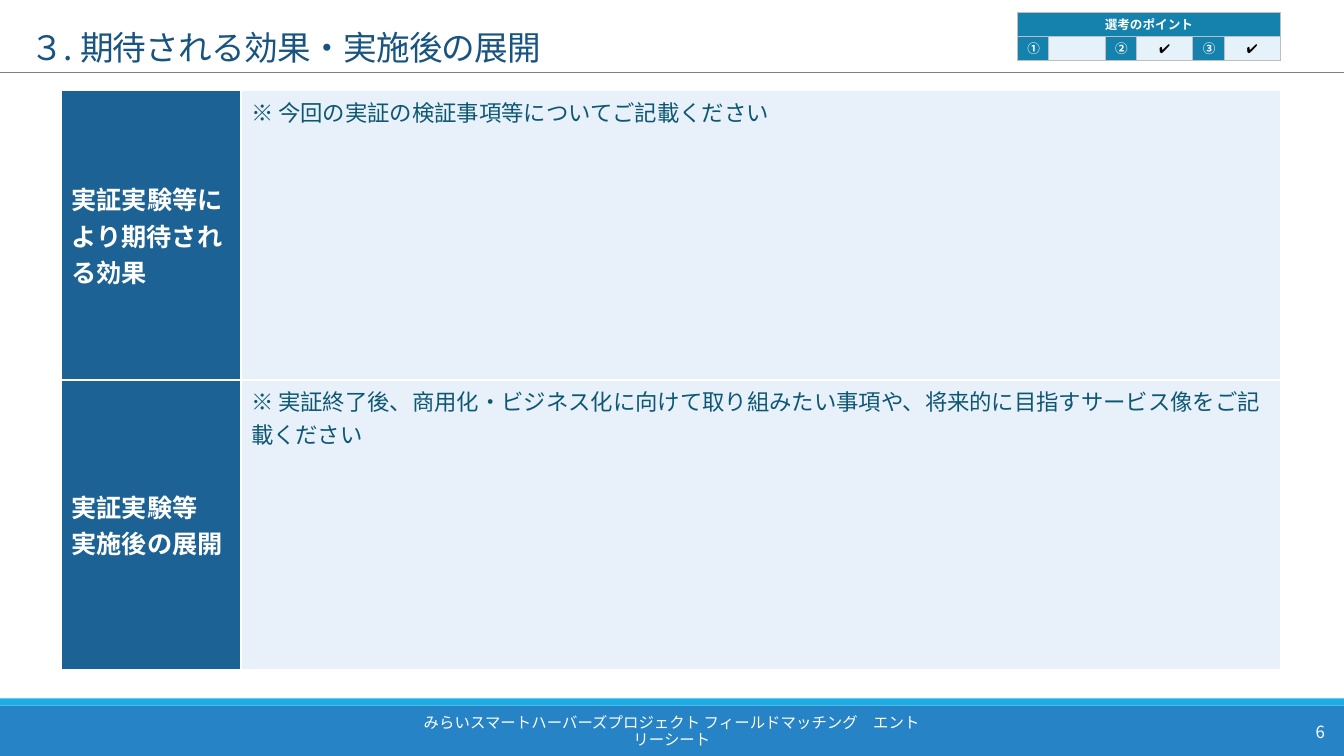
"""Builds the entry-sheet slide on expected effects and later rollout."""
from dataclasses import dataclass

from lxml import etree
from pptx import Presentation
from pptx import util as u
from pptx.dml.color import RGBColor
from pptx.enum import shapes, text
from pptx.oxml.ns import qn

TITLE = "３. 期待される効果・実施後の展開"
SECTIONS = [
    ("実証実験等により期待される効果", "※ 今回の実証の検証事項等についてご記載ください", 0.29),
    ("実証実験等\n実施後の展開",
     "※ 実証終了後、商用化・ビジネス化に向けて取り組みたい事項や、将来的に目指すサービス像をご記載ください", 0),
]
POINTS_HEADING = "選考のポイント"
POINTS = [("①", ""), ("②", "✔"), ("③", "✔")]
FOOTER = "みらいスマートハーバーズプロジェクト フィールドマッチング　エントリーシート"
PAGE_NUMBER = "6"


@dataclass(frozen=True)
class Theme:
    """Colours, font and type sizes of the slide."""
    font: str = "Noto Sans CJK JP"
    white: str = "FFFFFF"
    black: str = "000000"
    title: str = "195481"
    label: str = "1D6294"
    body: str = "E8F1FA"
    hint: str = "0E5772"
    point: str = "1482AC"
    check: str = "E6F2FA"
    grid: str = "BFBFBF"
    rule: str = "808080"
    bar: str = "2683C6"
    stripe: str = "1CADE4"
    title_size: float = 24
    label_size: float = 18
    hint_size: float = 16
    point_size: float = 9
    footer_size: float = 11
    number_size: float = 12


THEME = Theme()
WIDTH, HEIGHT = 13.33, 7.5
BAR_TOP, STRIPE_HEIGHT, RULE_TOP = 7, 0.07, 0.72
ALIGN, ANCHOR = text.PP_ALIGN, text.MSO_ANCHOR


def box_of(*lengths):
    """Turns inch values into lengths."""
    return [u.Inches(length) for length in lengths]


def assign(target, values):
    """Sets each attribute from a dict of format values."""
    for name, value in values.items():
        setattr(target, name, value)


def write(frame, content, size, color, bold=False, **layout):
    """Writes one formatted paragraph for each line of content."""
    for index, line in enumerate(content.split("\n")):
        para = frame.add_paragraph() if index else frame.paragraphs[0]
        assign(para, layout)
        if not line:
            etree.SubElement(para._p, qn("a:endParaRPr"), sz=str(int(size * 100)))
            continue
        span = para.add_run()
        span.text = line
        assign(span.font, {"size": u.Pt(size), "bold": bold, "name": THEME.font})
        span.font.color.rgb = RGBColor.from_string(color)
        east = etree.SubElement(span.font._element, qn("a:ea"))
        east.set("typeface", THEME.font)


def add_bar(page, top, height, color):
    """Draws a full-width band."""
    bar = page.shapes.add_shape(shapes.MSO_SHAPE.RECTANGLE, *box_of(0, top, WIDTH, height))
    bar.shadow.inherit = False
    bar.fill.solid()
    bar.fill.fore_color.rgb = RGBColor.from_string(color)
    bar.line.fill.background()


def add_rule(page):
    """Draws the line below the title."""
    rule = page.shapes.add_connector(
        shapes.MSO_CONNECTOR.STRAIGHT, *box_of(0, RULE_TOP, WIDTH, RULE_TOP))
    rule.line.color.rgb = RGBColor.from_string(THEME.rule)
    rule.line.width = u.Pt(0.5)
    etree.SubElement(rule._element.spPr, qn("a:effectLst"))


def add_grid(page, left, top, columns, rows):
    """Adds a plain table with the given column widths and row heights."""
    table = page.shapes.add_table(
        len(rows), len(columns), *box_of(left, top, sum(columns), sum(rows))).table
    assign(table, {"first_row": False, "horz_banding": False})
    for column, width in zip(table.columns, columns):
        column.width = u.Inches(width)
    for row, height in zip(table.rows, rows):
        row.height = u.Inches(height)
    return table


def style_cell(cell, fill, border, weight, **layout):
    """Fills a cell and draws its four borders."""
    assign(cell, layout)
    properties = cell._tc.get_or_add_tcPr()
    for side in ("a:lnL", "a:lnR", "a:lnT", "a:lnB"):
        line = etree.SubElement(properties, qn(side), w=str(u.Pt(weight)))
        paint = etree.SubElement(line, qn("a:solidFill"))
        etree.SubElement(paint, qn("a:srgbClr"), val=border)
    cell.fill.solid()
    cell.fill.fore_color.rgb = RGBColor.from_string(fill)


def add_sections(page):
    """Adds the table of sections and their hints."""
    table = add_grid(page, 0.61, 0.9, [1.78, 10.31], [2.87] * len(SECTIONS))
    for row, (label, hint, indent) in enumerate(SECTIONS):
        label_cell, hint_cell = table.cell(row, 0), table.cell(row, 1)
        style_cell(label_cell, THEME.label, THEME.white, 1, vertical_anchor=ANCHOR.MIDDLE)
        write(label_cell.text_frame, label, THEME.label_size, THEME.white, bold=True)
        style_cell(hint_cell, THEME.body, THEME.white, 1)
        write(hint_cell.text_frame, hint, THEME.hint_size, THEME.hint)
        if indent:
            properties = hint_cell.text_frame.paragraphs[0]._p.get_or_add_pPr()
            properties.set("marL", str(u.Inches(indent)))
            properties.set("indent", str(-u.Inches(indent)))


def add_points(page):
    """Adds the small table of selection points."""
    table = add_grid(page, 10.09, 0.12, [0.31, 0.56] * len(POINTS), [0.24] * 2)
    marks = [mark for pair in POINTS for mark in pair]
    heading = [POINTS_HEADING] + [""] * (len(marks) - 1)
    for row, entries in enumerate([heading, marks]):
        for column, entry in enumerate(entries):
            cell = table.cell(row, column)
            is_check = row == 1 and column % 2 == 1
            style_cell(cell, THEME.check if is_check else THEME.point, THEME.grid, 0.5,
                       vertical_anchor=ANCHOR.MIDDLE,
                       margin_top=u.Inches(0.02), margin_bottom=u.Inches(0.02))
            write(cell.text_frame, entry, THEME.point_size,
                  THEME.black if is_check else THEME.white, bold=True, alignment=ALIGN.CENTER)
    table.cell(0, 0).merge(table.cell(0, len(marks) - 1))


def add_label(page, left, width, content, size, **layout):
    """Adds white text on the footer bar."""
    frame = page.shapes.add_textbox(*box_of(left, 7.06, width, 0.4)).text_frame
    assign(frame, {"word_wrap": True, "vertical_anchor": ANCHOR.MIDDLE})
    write(frame, content, size, THEME.white, **layout)


def add_title(page):
    """Places and formats the title."""
    title = page.shapes.title
    assign(title, dict(zip(("left", "top", "width", "height"), box_of(0.2, 0, 13.13, RULE_TOP))))
    frame = title.text_frame
    assign(frame, {"word_wrap": True, "auto_size": text.MSO_AUTO_SIZE.NONE,
                   "vertical_anchor": ANCHOR.BOTTOM})
    write(frame, TITLE, THEME.title_size, THEME.title, alignment=ALIGN.LEFT, line_spacing=0.85)
    frame.paragraphs[0].runs[0].font._element.set("spc", "-50")


def main():
    """Builds and saves the deck."""
    deck = Presentation()
    assign(deck, {"slide_width": u.Inches(WIDTH), "slide_height": u.Inches(HEIGHT)})
    page = deck.slides.add_slide(deck.slide_layouts[5])
    add_bar(page, BAR_TOP, HEIGHT - BAR_TOP, THEME.bar)
    add_bar(page, BAR_TOP - STRIPE_HEIGHT, STRIPE_HEIGHT, THEME.stripe)
    add_rule(page)
    add_title(page)
    add_sections(page)
    add_label(page, 4.03, 5.27, FOOTER, THEME.footer_size,
              alignment=ALIGN.CENTER, line_spacing=0.9)
    add_label(page, 11.81, 1.43, PAGE_NUMBER, THEME.number_size, alignment=ALIGN.RIGHT)
    add_points(page)
    deck.save("out.pptx")


if __name__ == "__main__":
    main()
